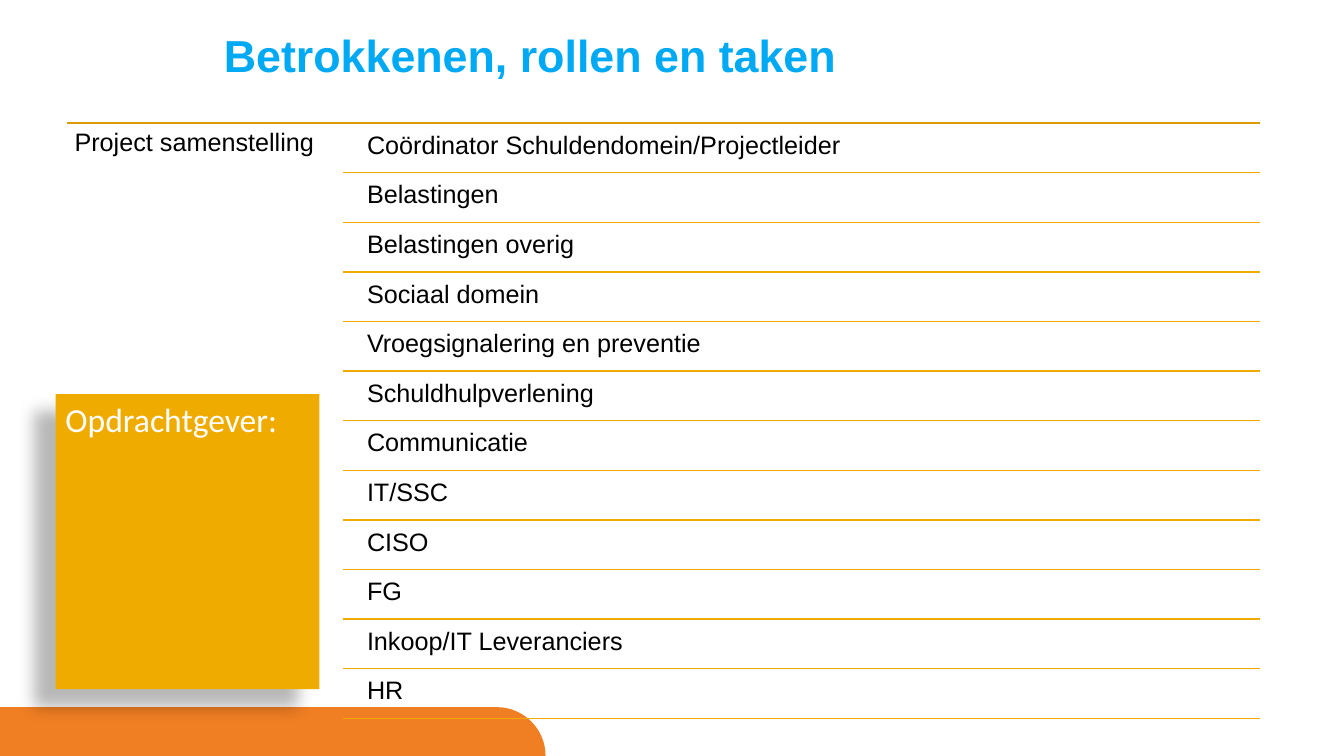
from math import cos, pi, sin

from lxml.etree import SubElement
from pptx import Presentation
from pptx.dml.color import RGBColor
from pptx.enum.shapes import MSO_CONNECTOR, MSO_SHAPE
from pptx.enum.text import MSO_ANCHOR, PP_ALIGN
from pptx.oxml.ns import qn
from pptx.util import Cm, Pt

GOLD = "F0AB00"
ROLES = [
    "Coördinator Schuldendomein/Projectleider",
    "Belastingen",
    "Belastingen overig",
    "Sociaal domein",
    "Vroegsignalering en preventie",
    "Schuldhulpverlening",
    "Communicatie",
    "IT/SSC",
    "CISO",
    "FG",
    "Inkoop/IT Leveranciers",
    "HR",
]


def color(code):
    return RGBColor.from_string(code)


def write(shape, text, size=18, font="Arial", ink="000000", bold=False,
          side=0.18, top=0.18, lead=0.9):
    """Put one left-aligned paragraph at the top of a shape; insets in cm."""
    frame = shape.text_frame
    frame.word_wrap = True
    frame.vertical_anchor = MSO_ANCHOR.TOP
    frame.margin_left = frame.margin_right = Cm(side)
    frame.margin_top = frame.margin_bottom = Cm(top)
    para = frame.paragraphs[0]
    para.alignment = PP_ALIGN.LEFT
    para.line_spacing = lead
    run = para.add_run()
    run.text = text
    run.font.size = Pt(size)
    run.font.name = font
    run.font.bold = bold
    run.font.color.rgb = color(ink)


deck = Presentation()
deck.slide_width, deck.slide_height = Cm(33.87), Cm(19.05)
slide = deck.slides.add_slide(deck.slide_layouts[6])
shapes = slide.shapes

# Footer: two overlapping panels with a round top right corner
width, high, base = 7.5, 1.23, 19.05
for left in (0, 6.25):
    hub = left + width - high
    arc = [(hub + high * sin(step * pi / 32), base - high * cos(step * pi / 32))
           for step in range(17)]
    points = [(Cm(x), Cm(y)) for x, y in [(left, base - high)] + arc]
    outline = shapes.build_freeform(Cm(left), Cm(base))
    outline.add_line_segments(points, close=True)
    panel = outline.convert_to_shape()
    panel.shadow.inherit = False
    panel.fill.solid()
    panel.fill.fore_color.rgb = color("F07E23")
    panel.line.fill.background()

# Role list with a rule above and below each row
first, pitch, right = 3.1, 1.25, 31.75
for row in range(len(ROLES) + 1):
    y = first + row * pitch
    start = 8.64 if row else 1.7
    rule = shapes.add_connector(MSO_CONNECTOR.STRAIGHT,
                                Cm(start), Cm(y), Cm(right), Cm(y))
    rule.line.color.rgb = color(GOLD if row else "DA9B00")
    rule.line.width = Pt(1)
    SubElement(rule._element.spPr, qn("a:effectLst"))
    if row < len(ROLES):
        box = shapes.add_textbox(Cm(9.07), Cm(y + 0.06), Cm(22.68), Cm(1.19))
        write(box, ROLES[row])

group = shapes.add_textbox(Cm(1.7), Cm(first), Cm(6.93), Cm(15.06))
write(group, "Project samenstelling")

# Client card with a soft shadow to the lower left
card = shapes.add_shape(MSO_SHAPE.RECTANGLE,
                        Cm(1.4), Cm(9.93), Cm(6.65), Cm(7.44))
card.fill.solid()
card.fill.fore_color.rgb = color(GOLD)
card.line.fill.background()
card.shadow.inherit = False
effects = card._element.spPr.find(qn("a:effectLst"))
shade = SubElement(effects, qn("a:outerShdw"), blurRad=str(Pt(11.8)),
                   dist=str(Pt(19.7)), dir=str(141 * 60000), rotWithShape="0")
tint = SubElement(shade, qn("a:srgbClr"), val="000000")
SubElement(tint, qn("a:alpha"), val="28000")
write(card, "Opdrachtgever:", size=24, font="Calibri", ink="FFFFFF",
      side=0.25, top=0.13, lead=1.0)

title = shapes.add_textbox(Cm(5.64), Cm(0.86), Cm(27.86), Cm(2))
write(title, "Betrokkenen, rollen en taken", size=32, ink="00A9F3", bold=True,
      side=0, top=0)

deck.save("out.pptx")
